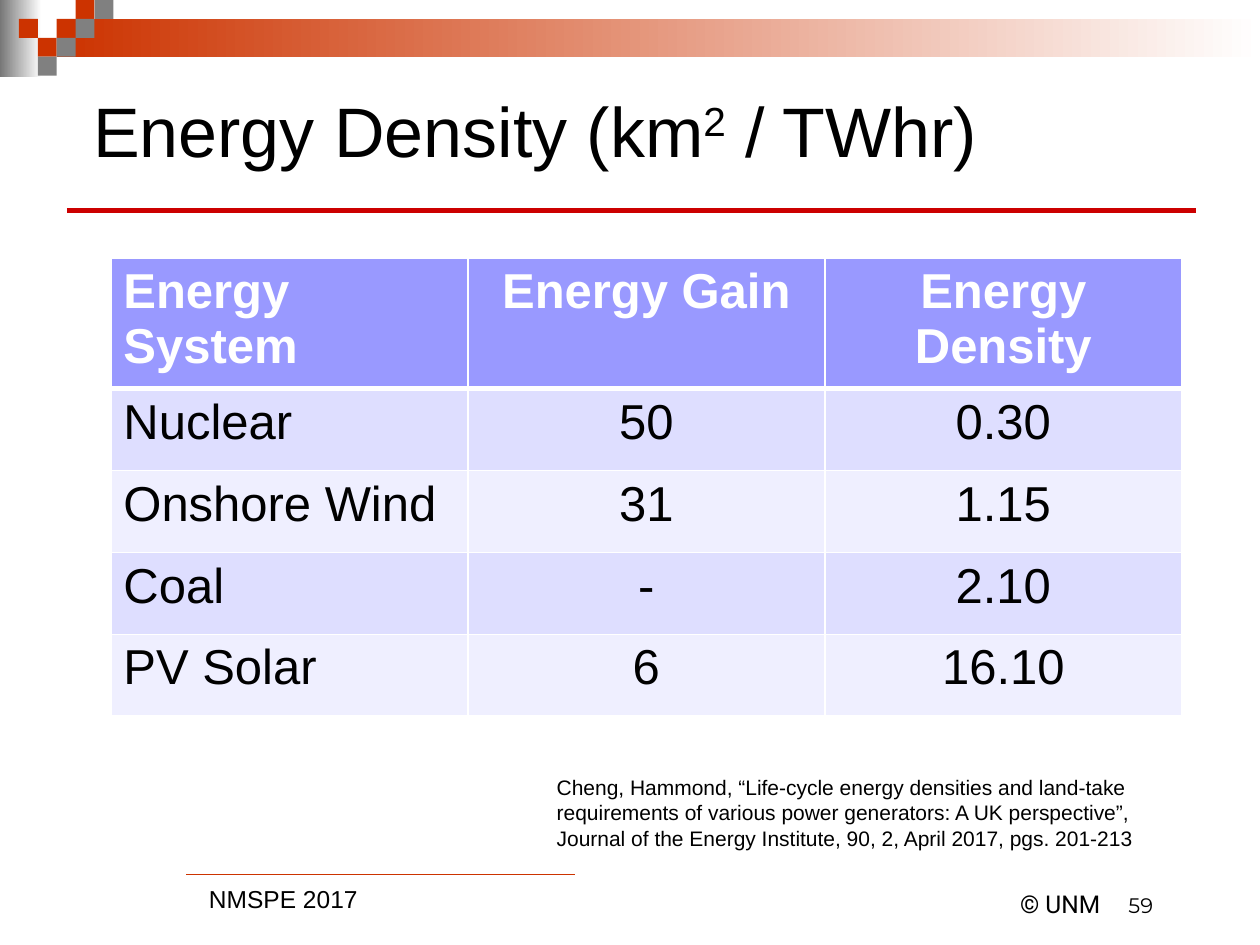
from lxml.etree import SubElement
from pptx import Presentation
from pptx.dml.color import RGBColor
from pptx.enum.shapes import MSO_CONNECTOR, MSO_SHAPE
from pptx.enum.text import MSO_ANCHOR as Anchor, PP_ALIGN as Align
from pptx.oxml.ns import qn
from pptx.util import Inches, Pt

BLACK = RGBColor(0x00, 0x00, 0x00)
WHITE = RGBColor(0xFF, 0xFF, 0xFF)
DARK_GRAY = RGBColor(0x77, 0x77, 0x77)
GRAY = RGBColor(0x80, 0x80, 0x80)
ORANGE = RGBColor(0xCC, 0x33, 0x00)
RED = RGBColor(0xCC, 0x00, 0x00)
HEADER_FILL = RGBColor(0x99, 0x99, 0xFF)
BAND_FILLS = (RGBColor(0xDE, 0xDE, 0xFF), RGBColor(0xEF, 0xEF, 0xFF))

TILE = 0.15
# Column and row of each tile on the corner checkerboard
ORANGE_TILES = [(3, 1), (2, 2), (1, 1), (4, 0)]
GRAY_TILES = [(4, 1), (3, 2), (5, 0), (2, 3)]

ROWS = [
    ("Energy System", "Energy Gain", "Energy Density"),
    ("Nuclear", "50", "0.30"),
    ("Onshore Wind", "31", "1.15"),
    ("Coal", "-", "2.10"),
    ("PV Solar", "6", "16.10"),
]
CITATION = (
    "Cheng, Hammond, “Life-cycle energy densities and land-take requirements "
    "of various power generators: A UK perspective”, Journal of the Energy "
    "Institute, 90, 2, April 2017, pgs. 201-213"
)


def format_font(font, size, color=BLACK, name="Arial", bold=False):
    values = {"size": Pt(size), "name": name, "bold": bold}
    for attribute, value in values.items():
        setattr(font, attribute, value)
    font.color.rgb = color


def add_rectangle(slide, left, top, width, height):
    box = slide.shapes.add_shape(
        MSO_SHAPE.RECTANGLE, Inches(left), Inches(top), Inches(width), Inches(height)
    )
    box.shadow.inherit = False
    box.line.fill.background()
    return box


def add_fading_bar(slide, left, top, width, height, color):
    """Add a bar that fades from the colour to white, left to right."""
    fill = add_rectangle(slide, left, top, width, height).fill
    fill.gradient()
    fill.gradient_angle = 0
    for stop, position, shade in zip(fill.gradient_stops, (0, 1), (color, WHITE)):
        stop.position = position
        stop.color.rgb = shade


def add_tiles(slide, tiles, color):
    for column, row in tiles:
        tile = add_rectangle(slide, column * TILE, row * TILE, TILE, TILE)
        tile.fill.solid()
        tile.fill.fore_color.rgb = color


def add_rule(slide, left, right, y, color, weight):
    rule = slide.shapes.add_connector(
        MSO_CONNECTOR.STRAIGHT, Inches(left), Inches(y), Inches(right), Inches(y)
    )
    rule.line.color.rgb = color
    rule.line.width = Pt(weight)
    SubElement(rule._element.spPr, qn("a:effectLst"))


def add_text(slide, left, top, width, height, text, size,
             font="Arial", align=Align.LEFT, anchor=Anchor.TOP):
    box = slide.shapes.add_textbox(
        Inches(left), Inches(top), Inches(width), Inches(height)
    )
    frame = box.text_frame
    frame.word_wrap = True
    frame.vertical_anchor = anchor
    para = frame.paragraphs[0]
    para.alignment = align
    span = para.add_run()
    span.text = text
    format_font(span.font, size, name=font)


def set_title(slide):
    title = slide.shapes.title
    place = {"left": 0.64, "top": 0.24, "width": 8.5, "height": 1.58}
    for attribute, value in place.items():
        setattr(title, attribute, Inches(value))
    frame = title.text_frame
    frame.word_wrap = True
    frame.vertical_anchor = Anchor.MIDDLE
    para = frame.paragraphs[0]
    para.alignment = Align.LEFT
    for text, baseline in [("Energy Density (km", 0), ("2", 30000), (" / TWhr)", 0)]:
        span = para.add_run()
        span.text = text
        format_font(span.font, 40)
        if baseline:
            span._r.get_or_add_rPr().set("baseline", str(baseline))


def set_borders(cell, weights):
    """Give the cell white borders, with the weight in points for each side."""
    properties = cell._tc.get_or_add_tcPr()
    for side, weight in weights.items():
        line = SubElement(properties, qn(f"a:ln{side}"), w=str(Pt(weight)))
        fill = SubElement(line, qn("a:solidFill"))
        SubElement(fill, qn("a:srgbClr"), val=str(WHITE))


def add_energy_table(slide):
    row_height = 0.65
    table = slide.shapes.add_table(
        len(ROWS), len(ROWS[0]), Inches(0.88), Inches(2.05),
        Inches(8.5), Inches(row_height * len(ROWS)),
    ).table
    for r, values in enumerate(ROWS):
        is_header = r == 0
        table.rows[r].height = Inches(row_height)
        for c, value in enumerate(values):
            cell = table.cell(r, c)
            weights = {"L": 1, "R": 1, "T": 3 if r == 1 else 1, "B": 3 if is_header else 1}
            set_borders(cell, weights)
            cell.fill.solid()
            cell.fill.fore_color.rgb = HEADER_FILL if is_header else BAND_FILLS[(r - 1) % 2]
            para = cell.text_frame.paragraphs[0]
            para.alignment = Align.CENTER if c else Align.LEFT
            span = para.add_run()
            span.text = value
            format_font(span.font, 28, WHITE if is_header else BLACK, bold=is_header)


def main():
    deck = Presentation()
    deck.slide_width, deck.slide_height = Inches(10), Inches(7.5)
    slide = deck.slides.add_slide(deck.slide_layouts[5])

    add_fading_bar(slide, 0, 0, 0.33, 0.61, DARK_GRAY)
    add_fading_bar(slide, 0.45, 0.15, 9.55, 0.3, ORANGE)
    add_tiles(slide, ORANGE_TILES, ORANGE)
    add_tiles(slide, GRAY_TILES, GRAY)
    add_text(slide, 1.56, 6.97, 4.08, 0.33, "NMSPE 2017", 14)
    add_rule(slide, 1.48, 4.56, 6.94, ORANGE, 1)
    add_rule(slide, 0.53, 9.49, 1.67, RED, 3)

    set_title(slide)
    add_energy_table(slide)
    add_text(slide, 4.32, 6.1, 5, 0.71, CITATION, 12)
    add_text(slide, 6.83, 7.01, 3.17, 0.49, "© UNM", 14, "Roboto", Align.CENTER)
    add_text(slide, 7.17, 6.83, 2.08, 0.5, "59", 12, "Montserrat", Align.RIGHT, Anchor.BOTTOM)
    deck.save("out.pptx")


if __name__ == "__main__":
    main()
